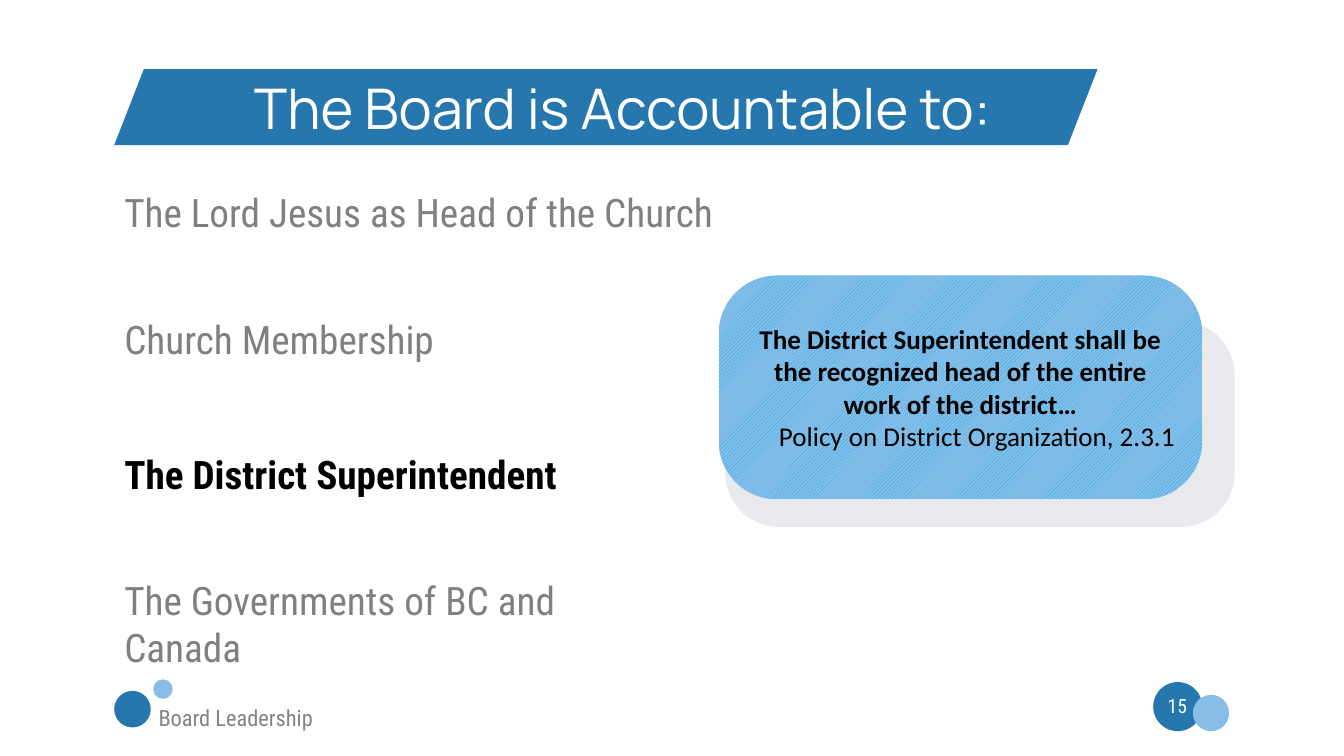
import pptx
import pptx.dml.color
import pptx.enum.dml
import pptx.enum.shapes
import pptx.enum.text
import pptx.util
import lxml.etree

Pt = pptx.util.Pt
RGBColor = pptx.dml.color.RGBColor
SHAPE = pptx.enum.shapes.MSO_SHAPE
ALIGN = pptx.enum.text.PP_ALIGN
ANCHOR = pptx.enum.text.MSO_ANCHOR

WHITE = RGBColor(0xFF, 0xFF, 0xFF)
BLACK = RGBColor(0x00, 0x00, 0x00)
BLUE = RGBColor(0x26, 0x77, 0xAE)
LIGHT_BLUE = RGBColor(0x88, 0xBD, 0xE7)
BRIGHT_BLUE = RGBColor(0x00, 0xB0, 0xF0)
PALE_GRAY = RGBColor(0xE9, 0xEA, 0xEE)
GRAY = RGBColor(0x80, 0x80, 0x80)
FOOTER_GRAY = RGBColor(0x84, 0x83, 0x88)

INSETS = {"margin_left": Pt(10.8), "margin_right": Pt(10.8),
          "margin_top": Pt(5.76), "margin_bottom": Pt(5.76),
          "word_wrap": True, "auto_size": pptx.enum.text.MSO_AUTO_SIZE.NONE}

deck = pptx.Presentation()
deck.slide_width, deck.slide_height = Pt(1440.72), Pt(810)
page = deck.slides.add_slide(deck.slide_layouts[1])


def add_plain_shape(kind, left, top, width, height, color, adjustment=None):
    shape = page.shapes.add_shape(kind, Pt(left), Pt(top), Pt(width), Pt(height))
    shape.shadow.inherit = False
    shape.line.fill.background()
    shape.fill.solid()
    shape.fill.fore_color.rgb = color
    if adjustment is not None:
        shape.adjustments[0] = adjustment
    return shape


def write(para, text, name, size, color, bold=False, align=ALIGN.LEFT):
    para.text = text
    para.alignment = align
    for span in para.runs:
        for key, value in {"name": name, "size": Pt(size), "bold": bold}.items():
            setattr(span.font, key, value)
        span.font.color.rgb = color


# Footer circles
for left, top, size, color in [(1236.2, 730.8, 52.6, BLUE), (122.4, 740.2, 39.2, BLUE),
                               (164.2, 727.9, 20.9, LIGHT_BLUE),
                               (1278.7, 744.5, 38.9, LIGHT_BLUE)]:
    add_plain_shape(SHAPE.OVAL, left, top, size, size, color)

# Footer texts
for left, top, width, height, text, size, color, align in [
        (1236.2, 738, 51.8, 43.2, "15", 21, WHITE, ALIGN.CENTER),
        (159.1, 748.8, 190.8, 40.3, "Board Leadership", 24, FOOTER_GRAY, ALIGN.LEFT)]:
    box = page.shapes.add_textbox(Pt(left), Pt(top), Pt(width), Pt(height))
    for key, value in INSETS.items():
        setattr(box.text_frame, key, value)
    write(box.text_frame.paragraphs[0], text, "Roboto Condensed", size, color, align=align)

# List of those the board answers to
body = page.placeholders[1]
for key, value in {"left": 122.4, "top": 195.84, "width": 655.2, "height": 525.6}.items():
    setattr(body, key, Pt(value))
for key, value in INSETS.items():
    setattr(body.text_frame, key, value)
body.text_frame.vertical_anchor = ANCHOR.TOP
items = [("The Lord Jesus as Head of the Church", 0, GRAY, False),
         ("Church Membership", 86.2, GRAY, False),
         ("The District Superintendent", 93.4, BLACK, True),
         ("The Governments of BC and\vCanada", 85.4, GRAY, False)]
for index, (text, gap, color, bold) in enumerate(items):
    para = body.text_frame.paragraphs[0] if index == 0 else body.text_frame.add_paragraph()
    properties = para._p.get_or_add_pPr()
    properties.set("marL", "0")
    properties.set("indent", "0")
    lxml.etree.SubElement(properties, pptx.oxml.ns.qn("a:buNone"))
    write(para, text, "Roboto Condensed", 42, color, bold)
    para.space_before = Pt(gap)

# Quotation card on its gray backing
add_plain_shape(SHAPE.ROUNDED_RECTANGLE, 777.6, 344.2, 545.8, 220.3, PALE_GRAY, 0.26)
card = add_plain_shape(SHAPE.ROUNDED_RECTANGLE, 770.4, 295.2, 518.4, 239.8, LIGHT_BLUE, 0.26)
card.fill.patterned()
card.fill.pattern = pptx.enum.dml.MSO_PATTERN.WIDE_UPWARD_DIAGONAL
card.fill.fore_color.rgb = BRIGHT_BLUE
card.fill.back_color.rgb = LIGHT_BLUE
for key, value in INSETS.items():
    setattr(card.text_frame, key, value)
card.text_frame.vertical_anchor = ANCHOR.MIDDLE
write(card.text_frame.paragraphs[0],
      "The District Superintendent shall be the recognized head of the entire work of the district…",
      "Calibri", 29, BLACK, True, ALIGN.CENTER)
write(card.text_frame.add_paragraph(), "Policy on District Organization, 2.3.1",
      "Calibri", 29, BLACK, align=ALIGN.RIGHT)

# Title in front of its banner
banner = add_plain_shape(SHAPE.PARALLELOGRAM, 122.4, 74.2, 1054.1, 81.4, BLUE, 0.39)
title = page.shapes.title
banner._element.addnext(title._element)
for key, value in {"left": 122.4, "top": 74.2, "width": 950.4, "height": 81.4}.items():
    setattr(title, key, Pt(value))
for key, value in {**INSETS, "margin_top": 0, "margin_bottom": 0}.items():
    setattr(title.text_frame, key, value)
title.text_frame.vertical_anchor = ANCHOR.MIDDLE
write(title.text_frame.paragraphs[0], "The Board is Accountable to:",
      "Manrope", 60, WHITE, align=ALIGN.RIGHT)

deck.save("out.pptx")
